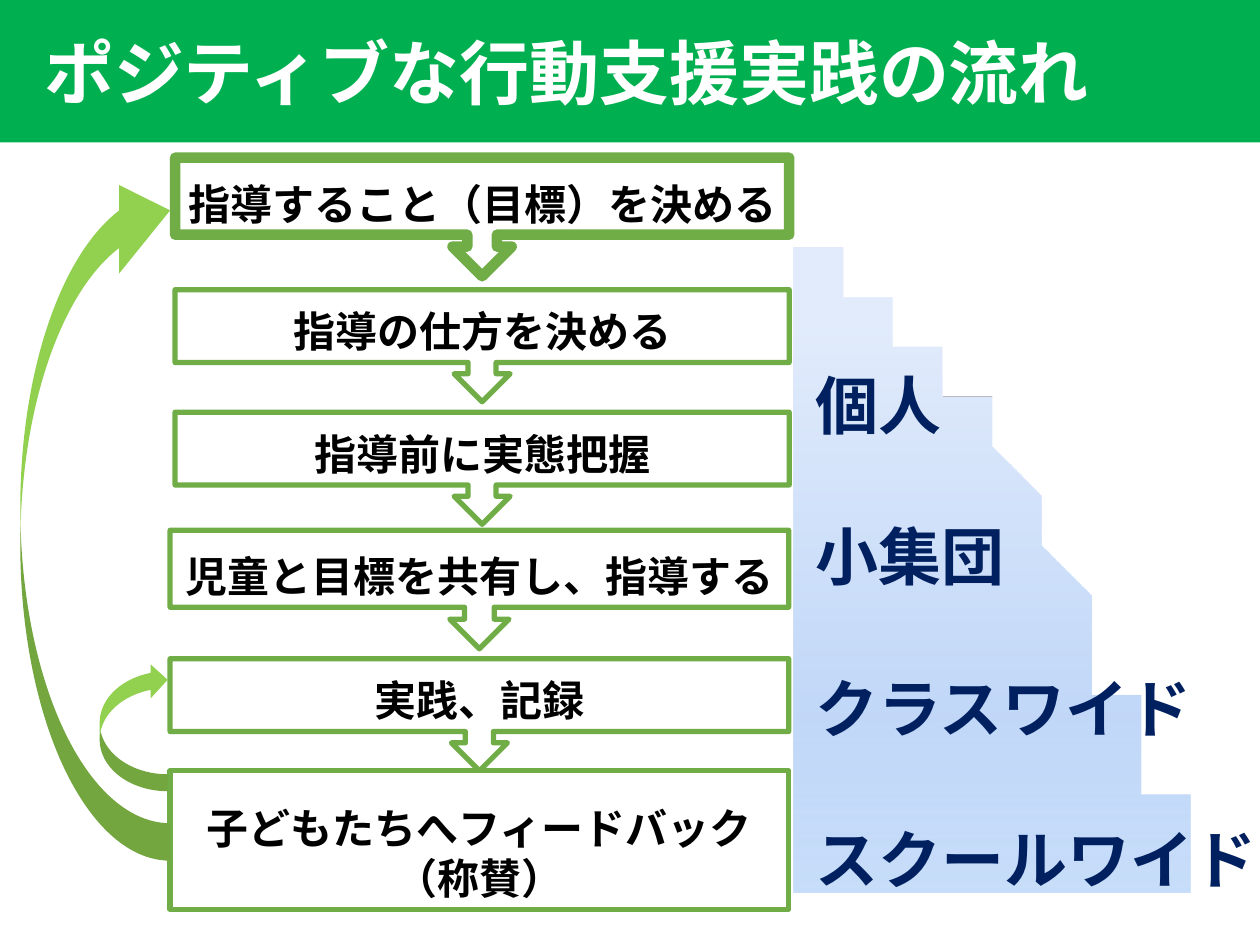
from lxml import etree
from pptx import Presentation
from pptx.dml.color import RGBColor
from pptx.enum.shapes import MSO_SHAPE as Shape
from pptx.enum.text import MSO_ANCHOR as Anchor, MSO_AUTO_SIZE as AutoSize, PP_ALIGN as Align
from pptx.oxml import parse_xml
from pptx.oxml.ns import qn
from pptx.util import Cm, Pt

TITLE = "ポジティブな行動支援実践の流れ"
WIDE, NARROW = (3.43, 12.47), (3.53, 12.38)
CALLOUT, BOX = Shape.DOWN_ARROW_CALLOUT, Shape.RECTANGLE
STEPS = [
    (["指導すること（目標）を決める"], CALLOUT, NARROW, 3.18, 2.39, 6),
    (["指導の仕方を決める"], CALLOUT, NARROW, 5.84, 2.26, 3),
    (["指導前に実態把握"], CALLOUT, NARROW, 8.31, 2.26, 3),
    (["児童と目標を共有し、指導する"], CALLOUT, WIDE, 10.69, 2.39, 3),
    (["実践、記録"], CALLOUT, WIDE, 13.28, 2.26, 3),
    (["子どもたちへフィードバック", "（称賛）"], BOX, WIDE, 15.54, 2.79, 3),
]
LEVELS = ["個人", "小集団", "クラスワイド", "スクールワイド"]
LOOPS = [
    ((-5.08, 8.84, 14, 3.02), (0.25, 0.59, 0.34)),
    ((1.4, 13.97, 2.59, 1.37), ()),
]
HILL_BASE = (16.41, 18.06)
HILL_CURVE = [(16.46, 4.75), (21.11, 8.53), (21.79, 13.61), (24.43, 18.06)]
HILL_STOPS = [(0, "B2D1F8", 71), (30, "C2D8F8", 100), (88, "E1EBFB", 100)]
CURVE_PIECES = 40
STEP_TEXT = {"size": Pt(24), "bold": True, "name": "Arial"}
LEVEL_TEXT = {**STEP_TEXT, "size": Pt(36)}
TITLE_TEXT = {**STEP_TEXT, "size": Pt(40)}


def paint(color_owner, color):
    color_owner.solid()
    color_owner.fore_color.rgb = RGBColor.from_string(color)


def place(shape, left, top, width, height):
    shape.left, shape.top, shape.width, shape.height = map(Cm, (left, top, width, height))


def write(shape, lines, look, color, **layout):
    frame = shape.text_frame
    frame.word_wrap = True
    frame.text = "\n".join(lines)
    for para in frame.paragraphs:
        for key, value in layout.items():
            setattr(para, key, value)
        for span in para.runs:
            for key, value in look.items():
                setattr(span.font, key, value)
            paint(span.font.fill, color)
    return frame


def add_shape(page, kind, area, color):
    shape = page.shapes.add_shape(kind, *map(Cm, area))
    shape.shadow.inherit = False
    paint(shape.fill, color)
    shape.line.fill.background()
    return shape


def curve_point(t):
    weights = ((1 - t) ** 3, 3 * t * (1 - t) ** 2, 3 * t * t * (1 - t), t ** 3)
    return tuple(sum(w * p[axis] for w, p in zip(weights, HILL_CURVE)) for axis in (0, 1))


def add_hill(page):
    builder = page.shapes.build_freeform(*HILL_BASE, scale=Cm(1))
    builder.add_line_segments([curve_point(i / CURVE_PIECES) for i in range(CURVE_PIECES + 1)])
    hill = builder.convert_to_shape()
    hill.shadow.inherit = False
    hill.line.fill.background()
    stops = "".join(
        f'<a:gs pos="{at * 1000}"><a:srgbClr val="{color}"><a:alpha val="{alpha * 1000}"/></a:srgbClr></a:gs>'
        for at, color, alpha in HILL_STOPS
    )
    gradient = parse_xml(
        '<a:gradFill xmlns:a="http://schemas.openxmlformats.org/drawingml/2006/main" rotWithShape="1">'
        f'<a:gsLst>{stops}</a:gsLst><a:lin ang="16200000" scaled="0"/></a:gradFill>'
    )
    hill.element.spPr.find(qn("a:custGeom")).addnext(gradient)


def add_step(page, lines, kind, span, top, height, weight):
    left, width = span
    step = add_shape(page, kind, (left, top, width, height), "FFFFFF")
    paint(step.line.fill, "70AD47")
    step.line.width = Pt(weight)
    frame = write(step, lines, STEP_TEXT, "000000", alignment=Align.CENTER)
    frame.vertical_anchor = Anchor.BOTTOM


def add_loop(page, area, adjustments):
    arrow = add_shape(page, Shape.CURVED_DOWN_ARROW, area, "92D050")
    arrow.rotation = 270
    for index, value in enumerate(adjustments):
        arrow.adjustments[index] = value


def fill_title(title):
    place(title, 0, 0, 25.4, 2.87)
    paint(title.fill, "00B050")
    frame = write(title, [TITLE], TITLE_TEXT, "FFFFFF", alignment=Align.LEFT)
    frame.margin_left = Cm(0.89)
    frame.vertical_anchor = Anchor.MIDDLE
    frame.auto_size = AutoSize.NONE


def fill_levels(body):
    place(body, 16.18, 5.74, 9.4, 12.57)
    frame = write(body, LEVELS, LEVEL_TEXT, "002060", line_spacing=2.0, space_before=Pt(0))
    frame.auto_size = AutoSize.SHAPE_TO_FIT_TEXT
    for para in body.element.iter(qn("a:pPr")):
        para.set("marL", "0")
        para.set("indent", "0")
        etree.SubElement(para, qn("a:buNone"))
    body.element.getparent().append(body.element)


def main():
    deck = Presentation()
    deck.slide_width, deck.slide_height = Cm(25.4), Cm(19.05)
    page = deck.slides.add_slide(deck.slide_layouts[1])
    add_hill(page)
    for step in STEPS:
        add_step(page, *step)
    for area, adjustments in LOOPS:
        add_loop(page, area, adjustments)
    fill_title(page.shapes.title)
    fill_levels(page.placeholders[1])
    deck.save("out.pptx")


if __name__ == "__main__":
    main()
